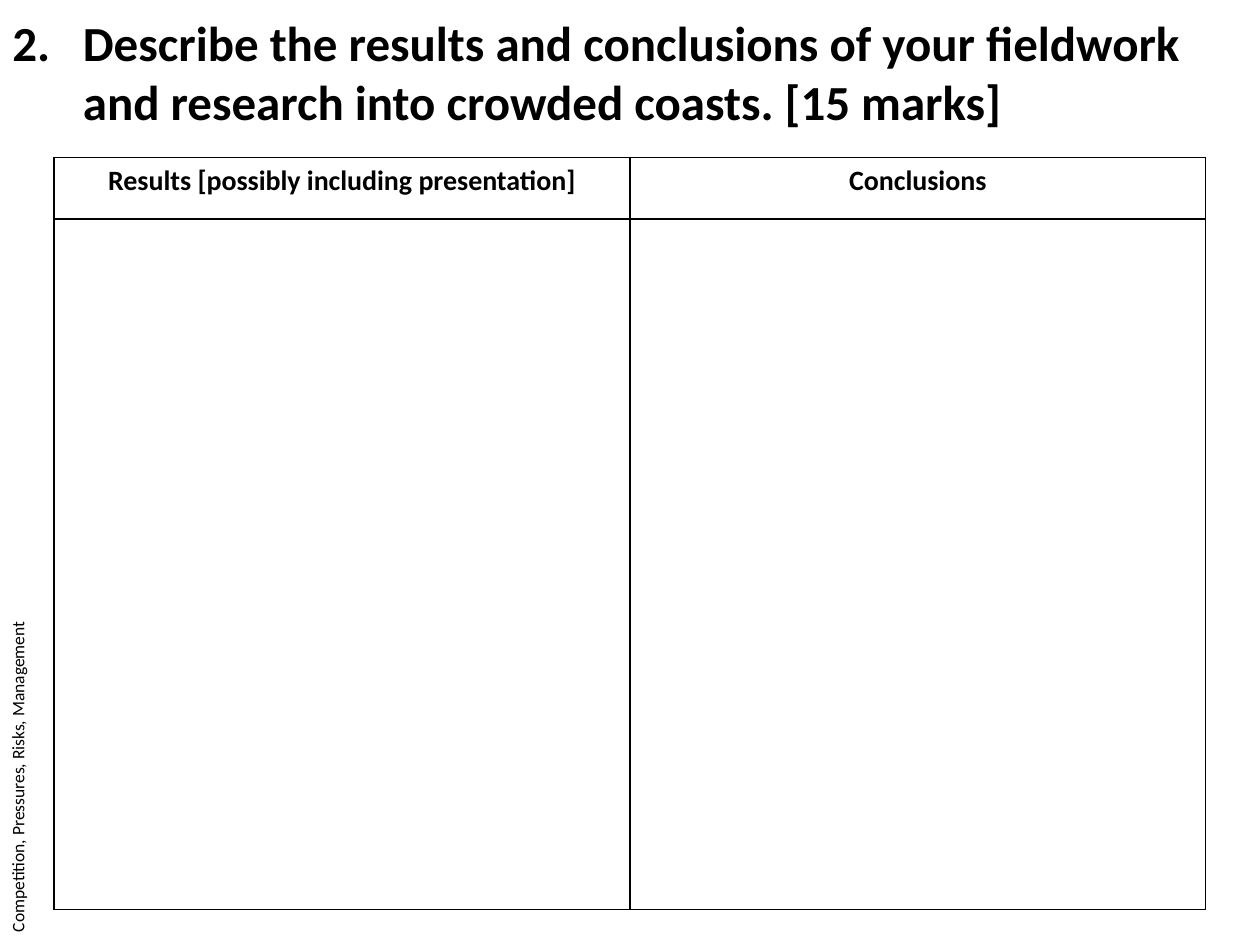
from pptx import Presentation
from pptx.dml.color import RGBColor
from pptx.enum.text import MSO_AUTO_SIZE, PP_ALIGN
from pptx.oxml import parse_xml
from pptx.oxml.ns import nsdecls
from pptx.util import Inches, Pt

CENTER = PP_ALIGN.CENTER
GROW = MSO_AUTO_SIZE.SHAPE_TO_FIT_TEXT

TITLE = "Describe the results and conclusions of your fieldwork and research into crowded coasts. [15 marks]"
NUMBER = 2
HEADS = ["Results [possibly including presentation]", "Conclusions"]
SIDE = "Competition, Pressures, Risks, Management"

THEME = {"font": "Calibri", "ink": "000000", "title": 28, "head": 16, "side": 10, "line": 1}
TABLE_AT = (0.43, 1.25)
COL = 4.57
ROWS = [0.49, 5.48]


def style(para, size, bold=False):
    font = para.font
    font.name = THEME["font"]
    font.size = Pt(size)
    font.bold = bold
    font.color.rgb = RGBColor.from_string(THEME["ink"])


def add_text(slide, box, text, size, bold=False, wrap=True):
    shape = slide.shapes.add_textbox(*map(Inches, box))
    frame = shape.text_frame
    frame.word_wrap = wrap
    frame.auto_size = GROW
    para = frame.paragraphs[0]
    para.text = text
    style(para, size, bold)
    return shape


def add_number(para, start, indent):
    """Number the paragraph from start, with a hanging indent."""
    props = para._p.get_or_add_pPr()
    props.set("marL", str(Inches(indent)))
    props.set("indent", str(-Inches(indent)))
    bullet = f'<a:buAutoNum {nsdecls("a")} type="arabicPeriod" startAt="{start}"/>'
    # The bullet must come before the default run properties.
    props.insert(0, parse_xml(bullet))


def add_border(cell):
    props = cell._tc.get_or_add_tcPr()
    for i, side in enumerate("LRTB"):
        props.insert(i, parse_xml(
            f'<a:ln{side} {nsdecls("a")} w="{Pt(THEME["line"])}"><a:solidFill>'
            f'<a:srgbClr val="{THEME["ink"]}"/></a:solidFill></a:ln{side}>'))


def add_grid(slide):
    size = (COL * len(HEADS), sum(ROWS))
    table = slide.shapes.add_table(
        len(ROWS), len(HEADS), *map(Inches, TABLE_AT + size)).table
    table.first_row = table.horz_banding = False
    for col in table.columns:
        col.width = Inches(COL)
    for row, high in zip(table.rows, ROWS):
        row.height = Inches(high)
    for cell in table.iter_cells():
        cell.fill.background()
        add_border(cell)
    for cell, head in zip(table.rows[0].cells, HEADS):
        cell.text = head
        para = cell.text_frame.paragraphs[0]
        para.alignment = CENTER
        style(para, THEME["head"], True)


def main():
    deck = Presentation()
    deck.slide_width, deck.slide_height = Inches(10), Inches(7.5)
    slide = deck.slides.add_slide(deck.slide_layouts[6])
    title = add_text(slide, (0, 0.05, 10, 1.04), TITLE, THEME["title"], bold=True)
    add_number(title.text_frame.paragraphs[0], NUMBER, 0.56)
    add_grid(slide)
    side = add_text(slide, (-1.21, 6.01, 2.7, 0.27), SIDE, THEME["side"], wrap=False)
    side.rotation = 270
    deck.save("out.pptx")


if __name__ == "__main__":
    main()
